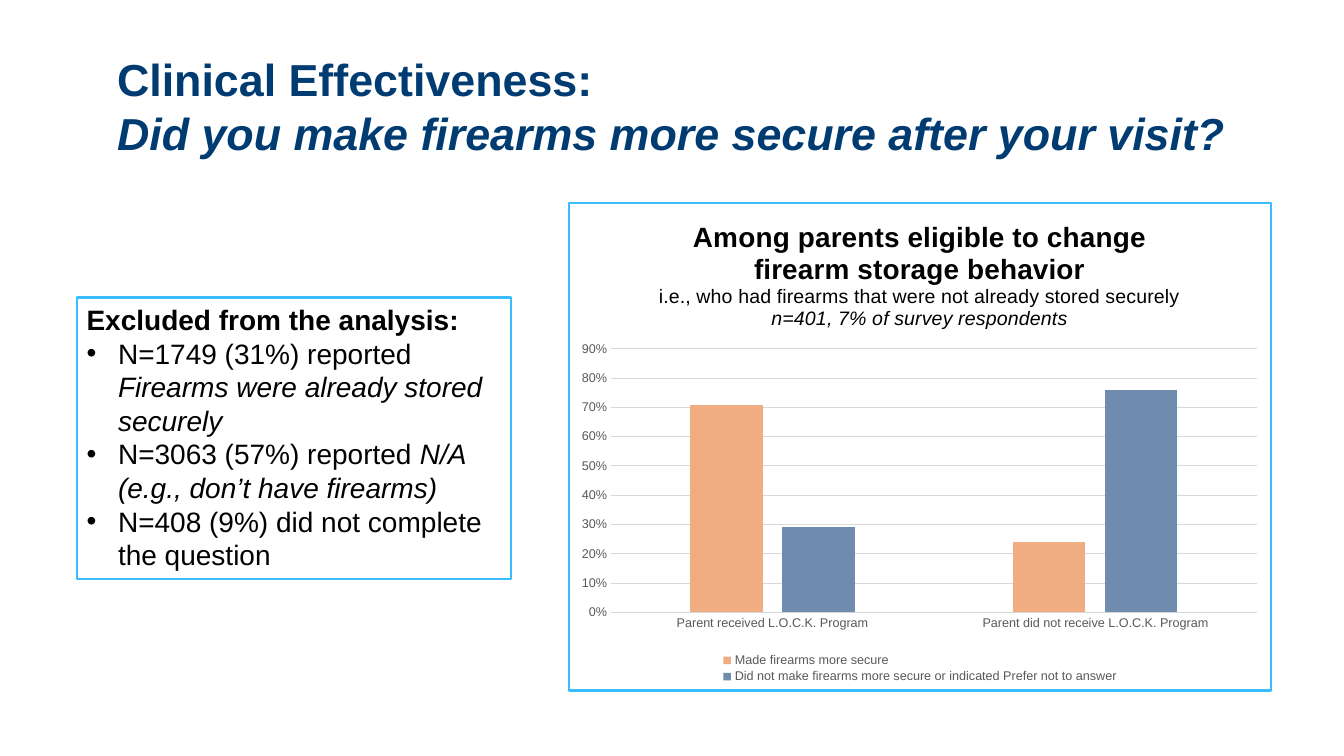
import pptx
import pptx.util
import pptx.chart.data
import pptx.dml.color
import pptx.enum.chart
import pptx.enum.text
import pptx.oxml
import pptx.oxml.ns

Pt = pptx.util.Pt
NAVY, BLACK, GREY, PALE, SKY = "003B71", "000000", "595959", "D9D9D9", "38BEFF"


def color(code):
    """Turn a hex string into a colour."""
    return pptx.dml.color.RGBColor.from_string(code)


def style(font, size, code, bold=False, slant=False):
    """Set the face, size and colour of a font."""
    font.name, font.size = "Arial", Pt(size)
    font.bold, font.italic = bold, slant
    font.color.rgb = color(code)


def add_run(para, text, size, code, bold=False, slant=False):
    """Add one styled run to a paragraph."""
    run = para.add_run()
    run.text = text
    style(run.font, size, code, bold, slant)


def add_frame(slide, box):
    """Add a wrapping text box and return it."""
    shape = slide.shapes.add_textbox(*map(Pt, box))
    shape.text_frame.word_wrap = True
    return shape


def add_head(slide, box):
    """Write the slide heading, set on the bottom of its box."""
    frame = add_frame(slide, box).text_frame
    frame.vertical_anchor = pptx.enum.text.MSO_ANCHOR.BOTTOM
    para = frame.paragraphs[0]
    add_run(para, "Clinical Effectiveness:", 32, NAVY, True)
    para.add_line_break()
    add_run(para, "Did you make firearms more secure after your visit?",
            32, NAVY, True, True)


def add_notes(slide, box):
    """Draw the outlined list of excluded answers."""
    shape = add_frame(slide, box)
    shape.line.color.rgb = color(SKY)
    shape.line.width = Pt(1.5)
    frame = shape.text_frame
    add_run(frame.paragraphs[0], "Excluded from the analysis:", 20, BLACK, True)
    items = [("N=1749 (31%) reported ", "Firearms were already stored securely"),
             ("N=3063 (57%) reported ", "N/A (e.g., don’t have firearms)"),
             ("N=408 (9%) did not complete the question", "")]
    for plain, slant in items:
        para = frame.add_paragraph()
        add_run(para, plain, 20, BLACK)
        if slant:
            add_run(para, slant, 20, BLACK, slant=True)
        props = para._p.get_or_add_pPr()
        props.set("marL", str(Pt(22.5)))
        props.set("indent", str(-Pt(22.5)))
        ns = pptx.oxml.ns.nsdecls("a")
        props.append(pptx.oxml.parse_xml(f'<a:buFont {ns} typeface="Arial"/>'))
        props.append(pptx.oxml.parse_xml(f'<a:buChar {ns} char="•"/>'))


def place(part, left, top, width, height, inner=False):
    """Fix a chart part at fractions of the chart area."""
    old = part.find(pptx.oxml.ns.qn("c:layout"))
    if old is not None:
        part.remove(old)
    target = '<c:layoutTarget val="inner"/>' if inner else ""
    sizes = zip("xywh", (left, top, width, height))
    marks = "".join(f'<c:{key} val="{val}"/>' for key, val in sizes)
    layout = pptx.oxml.parse_xml(
        f'<c:layout {pptx.oxml.ns.nsdecls("c")}><c:manualLayout>{target}'
        f'<c:xMode val="edge"/><c:yMode val="edge"/>{marks}'
        '</c:manualLayout></c:layout>')
    part.insert(0 if inner else 1, layout)


def add_graph(slide, box):
    """Draw the framed column chart with its title and legend."""
    data = pptx.chart.data.CategoryChartData(number_format="0%")
    data.categories = ["Parent received L.O.C.K. Program",
                       "Parent did not receive L.O.C.K. Program"]
    data.add_series("Made firearms more secure", (0.71, 0.24))
    data.add_series("Did not make firearms more secure or indicated "
                    "Prefer not to answer", (0.29, 0.76))
    kind = pptx.enum.chart.XL_CHART_TYPE.COLUMN_CLUSTERED
    chart = slide.shapes.add_chart(kind, *map(Pt, box), data).chart
    style(chart.font, 10, BLACK)

    frame = chart.chart_title.text_frame
    add_run(frame.paragraphs[0],
            "Among parents eligible to change firearm storage behavior",
            20, BLACK, True)
    add_run(frame.add_paragraph(),
            "i.e., who had firearms that were not already stored securely",
            14, BLACK)
    add_run(frame.add_paragraph(), "n=401, 7% of survey respondents",
            14, BLACK, slant=True)
    chart.chart_title.include_in_layout = False

    plot = chart.plots[0]
    plot.gap_width, plot.overlap = 219, -27
    plot.vary_by_categories = False
    for bars, code in zip(plot.series, ("F0AD82", "6F8BAD")):
        bars.format.fill.solid()
        bars.format.fill.fore_color.rgb = color(code)

    none = pptx.enum.chart.XL_TICK_MARK.NONE
    base, scale = chart.category_axis, chart.value_axis
    for axis in (base, scale):
        axis.major_tick_mark = axis.minor_tick_mark = none
        style(axis.tick_labels.font, 9, GREY)
    scale.minimum_scale, scale.maximum_scale, scale.major_unit = 0, 0.9, 0.1
    scale.tick_labels.number_format = "0%"
    scale.tick_labels.number_format_is_linked = False
    scale.format.line.fill.background()
    for line in (base.format.line, scale.major_gridlines.format.line):
        line.color.rgb = color(PALE)
        line.width = Pt(0.75)

    chart.has_legend = True
    legend = chart.legend
    legend.position = pptx.enum.chart.XL_LEGEND_POSITION.BOTTOM
    legend.include_in_layout = False
    style(legend.font, 9, GREY)
    place(legend._element, 0.21, 0.92, 0.58, 0.07)
    root = chart._chartSpace
    place(root.chart.plotArea, 0.06, 0.3, 0.92, 0.54, True)
    border = pptx.oxml.parse_xml(
        f'<c:spPr {pptx.oxml.ns.nsdecls("c", "a")}><a:noFill/>'
        f'<a:ln w="{Pt(1.5)}"><a:solidFill><a:srgbClr val="{SKY}"/>'
        '</a:solidFill></a:ln></c:spPr>')
    root.chart.addnext(border)


def main():
    """Build the slide and save it."""
    deck = pptx.Presentation()
    deck.slide_width, deck.slide_height = Pt(960), Pt(540)
    slide = deck.slides.add_slide(deck.slide_layouts[6])
    add_head(slide, (76.5, 24, 807, 93.5))
    add_graph(slide, (405.5, 144, 503, 350))
    add_notes(slide, (54.75, 212.5, 310.5, 201))
    deck.save("out.pptx")


if __name__ == "__main__":
    main()
